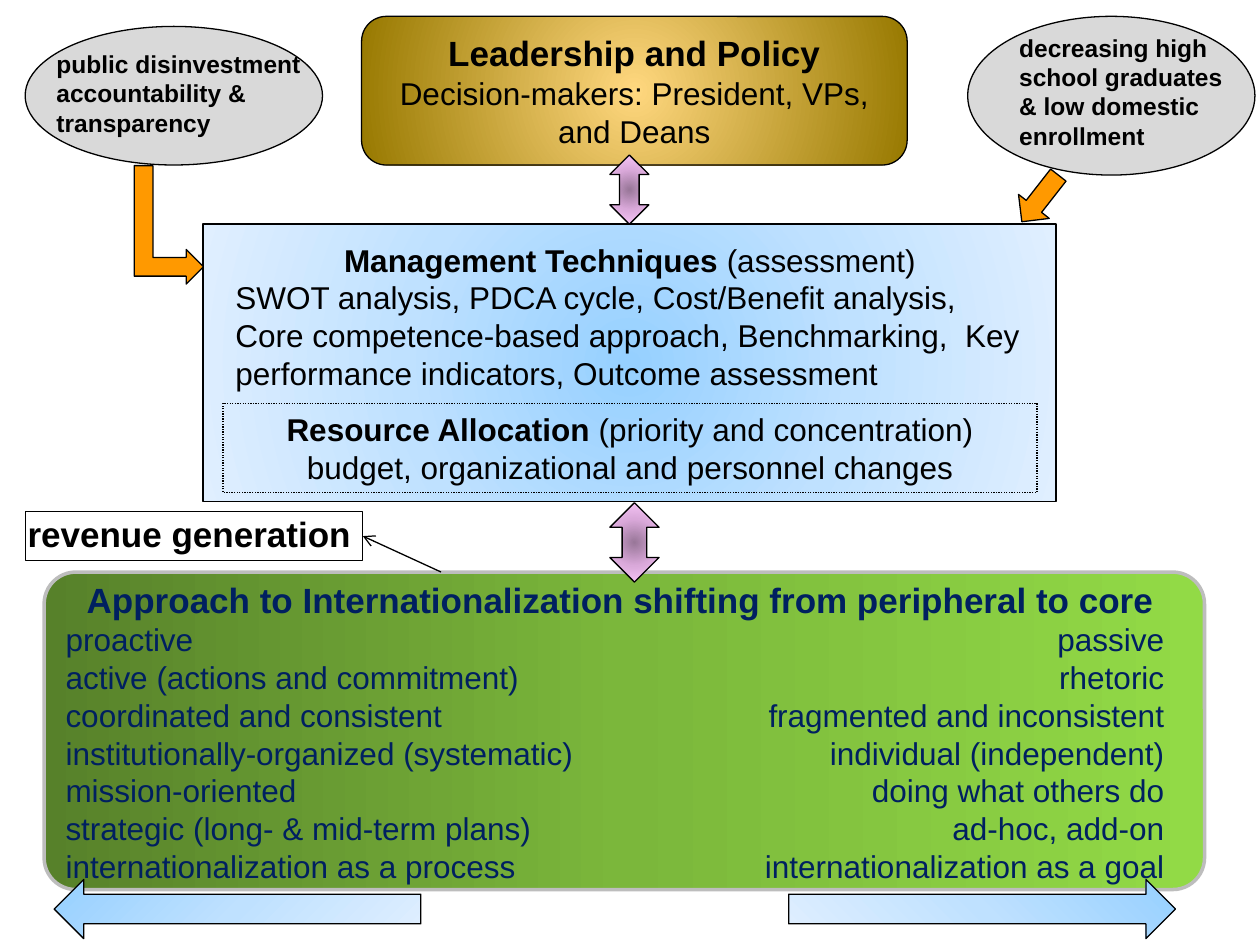
from lxml import etree
from pptx import Presentation
from pptx.dml.color import RGBColor
from pptx.enum import dml, shapes, text
from pptx.oxml import ns
from pptx.util import Inches, Pt

BLACK = RGBColor(0x00, 0x00, 0x00)
WHITE = RGBColor(0xFF, 0xFF, 0xFF)
GRAY = RGBColor(0xD9, 0xD9, 0xD9)
SILVER = RGBColor(0xBD, 0xBD, 0xBD)
ORANGE = RGBColor(0xFF, 0x99, 0x00)
NAVY = RGBColor(0x00, 0x20, 0x60)
GOLDS = [(0, RGBColor(0xFF, 0xD7, 0x7F)), (100, RGBColor(0x97, 0x79, 0x00))]
GREENS = [(0, RGBColor(0x57, 0x81, 0x2A)), (50, RGBColor(0x7B, 0xB7, 0x3B)),
          (100, RGBColor(0x92, 0xDA, 0x46))]
BLUES = [(0, RGBColor(0x96, 0xD0, 0xFF)), (50, RGBColor(0xBF, 0xE1, 0xFF)),
         (100, RGBColor(0xE0, 0xEF, 0xFF))]
PINKS = [(0, RGBColor(0x99, 0x77, 0x99)), (50, RGBColor(0xDA, 0xA9, 0xDA)),
         (100, RGBColor(0xFF, 0xCC, 0xFF))]
CENTER = (50, 50, 50, 50)
TOP_RIGHT = (100, 0, 0, 100)

HEADING = {"size": Pt(20), "bold": True}
BOLD = {"size": Pt(18), "bold": True}
BODY = {"size": Pt(18), "bold": False}
LABEL = {"size": Pt(14), "bold": True}
MIDDLE, LEFT = text.PP_ALIGN.CENTER, text.PP_ALIGN.LEFT

LEADERSHIP = [
    (MIDDLE, [("Leadership and Policy", HEADING)]),
    (MIDDLE, [("Decision-makers: President, VPs, and Deans", BODY)]),
]
ALLOCATION = [
    (MIDDLE, [("Resource Allocation ", BOLD), ("(priority and concentration)", BODY)]),
    (MIDDLE, [("budget, organizational and personnel changes", BODY)]),
]
MANAGEMENT = [
    (MIDDLE, [("Management Techniques ", BOLD), ("(assessment)", BODY)]),
    (LEFT, [("SWOT analysis, PDCA cycle, Cost/Benefit analysis, Core competence-based "
             "approach, Benchmarking,  Key performance indicators, Outcome assessment", BODY)]),
]
DISINVESTMENT = [
    (LEFT, [("public disinvestment", LABEL)]),
    (LEFT, [("accountability & transparency", LABEL)]),
]
ENROLLMENT = [(LEFT, [("decreasing high school graduates & low domestic enrollment", LABEL)])]
REVENUE = [(LEFT, [("revenue generation", HEADING)])]
SHIFTS = [
    ("proactive", "passive"),
    ("active (actions and commitment)", "rhetoric"),
    ("coordinated and consistent", "fragmented and inconsistent"),
    ("institutionally-organized (systematic)", "individual (independent)"),
    ("mission-oriented", "doing what others do"),
    ("strategic (long- & mid-term plans)", "ad-hoc, add-on"),
    ("internationalization as a process", "internationalization as a goal"),
]
APPROACH = [(MIDDLE, [("Approach to Internationalization shifting from peripheral to core", HEADING)])]
APPROACH += [(LEFT, [(f"{core}\t{peripheral}", BODY)]) for core, peripheral in SHIFTS]

prs = Presentation()
prs.slide_width, prs.slide_height = Inches(10), Inches(7.5)
slide = prs.slides.add_slide(prs.slide_layouts[6])


def gradient(shape, stops, focus=None, angle=0):
    fill = etree.Element(ns.qn("a:gradFill"), rotWithShape="1")
    stop_list = etree.SubElement(fill, ns.qn("a:gsLst"))
    for position, color in stops:
        stop = etree.SubElement(stop_list, ns.qn("a:gs"), pos=str(position * 1000))
        etree.SubElement(stop, ns.qn("a:srgbClr"), val=str(color))
    if focus:
        path = etree.SubElement(fill, ns.qn("a:path"), path="circle")
        sides = {side: str(share * 1000) for side, share in zip("ltrb", focus)}
        etree.SubElement(path, ns.qn("a:fillToRect"), **sides)
    else:
        etree.SubElement(fill, ns.qn("a:lin"), ang=str(angle * 60000), scaled="0")
    shape._element.spPr.find(ns.qn("a:prstGeom")).addnext(fill)


def write(shape, paragraphs, color=BLACK, anchor=text.MSO_ANCHOR.TOP):
    frame = shape.text_frame
    frame.word_wrap, frame.vertical_anchor = True, anchor
    for index, (align, runs) in enumerate(paragraphs):
        paragraph = frame.add_paragraph() if index else frame.paragraphs[0]
        paragraph.alignment = align
        for words, look in runs:
            run = paragraph.add_run()
            run.text = words
            run.font.name = "Arial"
            run.font.color.rgb = color
            for key, value in look.items():
                setattr(run.font, key, value)
    return frame


def box(at, paragraphs, color=BLACK):
    return write(slide.shapes.add_textbox(*map(Inches, at)), paragraphs, color)


def draw(kind, at, fill=None, line=BLACK, weight=0.75, adjust=(), turn=0, **shading):
    shape = slide.shapes.add_shape(kind, *map(Inches, at))
    shape.shadow.inherit = False
    shape.rotation = turn
    shape.line.color.rgb, shape.line.width = line, Pt(weight)
    for index, value in enumerate(adjust):
        shape.adjustments[index] = value
    if isinstance(fill, list):
        gradient(shape, fill, **shading)
    elif fill is None:
        shape.fill.background()
    else:
        shape.fill.solid()
        shape.fill.fore_color.rgb = fill
    return shape


kinds = shapes.MSO_SHAPE
leadership = draw(kinds.ROUNDED_RECTANGLE, (2.87, 0.13, 4.33, 1.18), GOLDS, focus=CENTER)
write(leadership, LEADERSHIP, anchor=text.MSO_ANCHOR.MIDDLE)

draw(kinds.ROUNDED_RECTANGLE, (0.35, 4.54, 9.21, 2.52), GREENS, SILVER, 2, [0.1])
approach = box((0.28, 4.54, 9.29, 2.52), APPROACH, NAVY)
approach.margin_left = approach.margin_right = Inches(0.24)
for row in approach.paragraphs[1:]:
    tabs = etree.SubElement(row._p.get_or_add_pPr(), ns.qn("a:tabLst"))
    etree.SubElement(tabs, ns.qn("a:tab"), pos=str(Inches(8.72)), algn="r")

draw(kinds.RIGHT_ARROW, (6.26, 6.98, 3.07, 0.47), BLUES, focus=TOP_RIGHT)
draw(kinds.LEFT_ARROW, (0.43, 6.98, 2.91, 0.47), BLUES, angle=45)
for at in [(4.84, 3.99, 0.39, 0.63), (4.84, 1.23, 0.31, 0.55)]:
    draw(kinds.UP_DOWN_ARROW, at, PINKS, focus=CENTER)

draw(kinds.RECTANGLE, (1.61, 1.78, 6.77, 2.2), BLUES, weight=1, focus=CENTER)
allocation = draw(kinds.RECTANGLE, (1.77, 3.2, 6.46, 0.71))
allocation.line.dash_style = dml.MSO_LINE.ROUND_DOT
write(allocation, ALLOCATION, anchor=text.MSO_ANCHOR.MIDDLE)
box((1.77, 1.86, 6.46, 1.62), MANAGEMENT)

draw(kinds.OVAL, (0.2, 0.21, 2.36, 1.1), GRAY)
box((0.35, 0.34, 2.36, 0.81), DISINVESTMENT)
draw(kinds.OVAL, (7.68, 0.13, 2.28, 1.26), GRAY)
box((7.99, 0.21, 1.89, 1.04), ENROLLMENT)
draw(kinds.BENT_UP_ARROW, (0.87, 1.51, 0.94, 0.55), ORANGE, adjust=[0.27, 0.25, 0.25], turn=90)
draw(kinds.DOWN_ARROW, (8.1, 1.34, 0.31, 0.47), ORANGE, turn=38)

revenue = draw(kinds.RECTANGLE, (0.2, 4.06, 2.68, 0.39), WHITE)
box((0.12, 4.02, 2.91, 0.44), REVENUE)
link = slide.shapes.add_connector(
    shapes.MSO_CONNECTOR.STRAIGHT, *map(Inches, (3.5, 4.54, 2.87, 4.22)))
link.end_connect(revenue, 3)
link.line.color.rgb, link.line.width = BLACK, Pt(0.75)
etree.SubElement(link.line._get_or_add_ln(), ns.qn("a:tailEnd"), type="arrow")
etree.SubElement(link._element.spPr, ns.qn("a:effectLst"))

prs.save("out.pptx")
